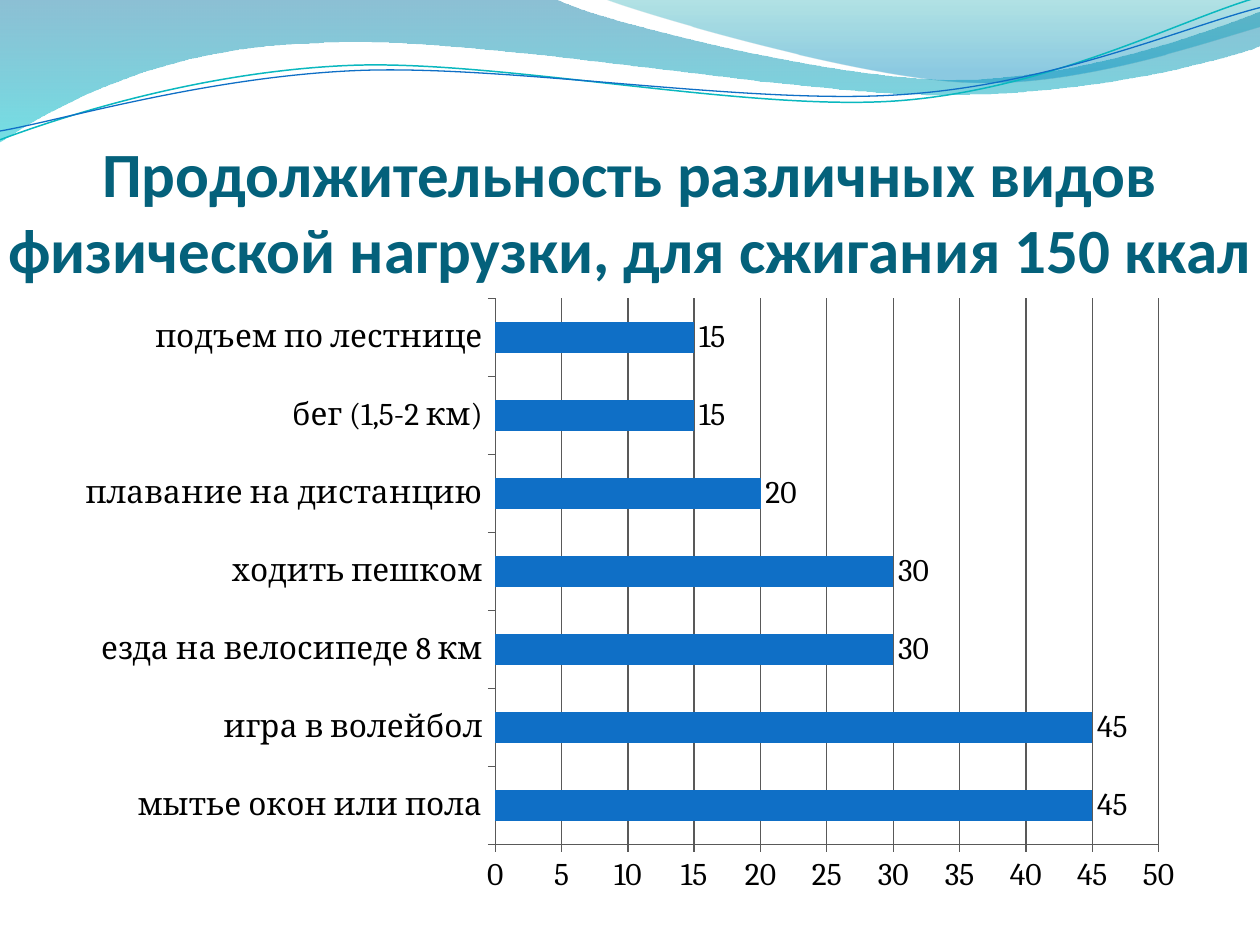
from math import cos, radians, sin
from lxml.etree import SubElement
from pptx import Presentation
from pptx.chart.data import CategoryChartData
from pptx.dml.color import RGBColor
from pptx.enum.chart import XL_CHART_TYPE as ChartType, XL_LABEL_POSITION as LabelPosition, XL_TICK_MARK as TickMark
from pptx.enum.text import MSO_ANCHOR as Anchor, MSO_AUTO_SIZE as AutoSize, PP_ALIGN as Align
from pptx.oxml.ns import qn
from pptx.util import Inches, Pt

COLORS = {
    "title": "04617B", "text": "000000", "bar": "0F6FC6", "grid": "595959",
    "teal_line": "0AB8BF", "blue_line": "0F6FC6",
    "deep": "0074A1", "aqua": "00C6CF", "teal": "00A1A9", "azure": "008BBF",
}

WAVES = [
    {"box": (-0.01, -0.01, 10.02, 1.14), "tilt": 0, "start": (0, 0),
     "gradient": [("deep", 0, 45), ("aqua", 1, 55)], "segments": [
        (4.4, -0.01), (4.76, 0.17, 6.64, 0.63, 7.58, 0.63), (8.53, 0.63, 9.58, 0.26, 10, 0.09),
        (10.01, 0.36), (9.83, 0.44, 8.7, 0.76, 7.46, 0.75), (6.22, 0.75, 3.82, 0.28, 2.57, 0.34),
        (1.29, 0.36, 0.46, 0.83, -0.01, 1.13), (0, 0)]},
    {"box": (4.79, -0.01, 5.21, 0.7), "tilt": 0, "start": (4.79, -0.01),
     "gradient": [("teal", 0, 30), ("azure", 0.8, 45)], "segments": [
        (5.09, 0.11, 6.82, 0.62, 7.69, 0.65), (8.56, 0.69, 9.61, 0.32, 10, 0.21),
        (10, 0), (4.79, -0.01)]},
    {"box": (-0.02, 0.22, 10.02, 0.71), "tilt": -2.7, "start": (0, 1.11),
     "line": ("teal_line", 0.85), "segments": [
        (0.48, 0.93, 1.58, 0.57, 2.77, 0.52), (3.95, 0.47, 5.93, 0.89, 7.13, 0.8),
        (8.33, 0.71, 9.38, 0.15, 9.98, -0.02)]},
    {"box": (-0.02, 0.3, 10.03, 0.58), "tilt": -2.7, "start": (0, 1.04),
     "line": ("blue_line", 0.75), "segments": [
        (0.47, 0.96, 1.64, 0.61, 2.83, 0.56), (4.03, 0.51, 5.97, 0.84, 7.17, 0.75),
        (8.36, 0.67, 9.41, 0.21, 10, 0.06)]},
]

MINUTES = {
    "мытье окон или пола": 45,
    "игра в волейбол": 45,
    "езда на велосипеде 8 км": 30,
    "ходить пешком": 30,
    "плавание на дистанцию": 20,
    "бег (1,5-2 км)": 15,
    "подъем по лестнице": 15,
}


def color(name):
    return RGBColor.from_string(COLORS[name])


def apply_format(target, values):
    for name, value in values.items():
        setattr(target, name, value)


def point_in_box(x, y, box, tilt):
    left, top, width, height = box
    angle = radians(-tilt)
    x, y = x - left - width / 2, y - top - height / 2
    return (Inches(x * cos(angle) - y * sin(angle) + width / 2),
            Inches(x * sin(angle) + y * cos(angle) + height / 2))


def draw_curves(shape, wave):
    outline = next(shape.element.iter(qn("a:path")))
    outline.set("w", str(shape.width))
    outline.set("h", str(shape.height))
    for element in list(outline):
        outline.remove(element)
    for index, numbers in enumerate([wave["start"], *wave["segments"]]):
        tag = "a:moveTo" if index == 0 else "a:lnTo" if len(numbers) == 2 else "a:cubicBezTo"
        command = SubElement(outline, qn(tag))
        for point in zip(numbers[::2], numbers[1::2]):
            x, y = point_in_box(*point, wave["box"], wave["tilt"])
            SubElement(command, qn("a:pt"), x=str(x), y=str(y))
    if "gradient" in wave:
        SubElement(outline, qn("a:close"))


def fill_gradient(shape, stops):
    shape.fill.gradient()
    shape.fill.gradient_angle = 270
    for stop, (name, position, _) in zip(shape.fill.gradient_stops, stops):
        stop.color.rgb = color(name)
        stop.position = position
    elements = list(shape.element.iter(qn("a:srgbClr")))
    for element, (_, _, opacity) in zip(elements, stops):
        SubElement(element, qn("a:alpha"), val=str(opacity * 1000))


def add_wave(slide, left, top, wave):
    x, y, width, height = map(Inches, wave["box"])
    builder = slide.shapes.build_freeform(0, 0)
    builder.add_line_segments([(width, height)], close=False)
    shape = builder.convert_to_shape()
    apply_format(shape, {"left": left + x, "top": top + y, "width": width, "height": height,
                         "rotation": wave["tilt"]})
    shape.shadow.inherit = False
    draw_curves(shape, wave)
    if "gradient" in wave:
        fill_gradient(shape, wave["gradient"])
        shape.line.fill.background()
    else:
        name, line_width = wave["line"]
        shape.fill.background()
        shape.line.color.rgb = color(name)
        shape.line.width = Pt(line_width)


def add_header(slide, left, top):
    for wave in WAVES:
        add_wave(slide, left, top, wave)


def add_title(slide, left, top, width, height):
    title = slide.shapes.title
    title.element.getparent().append(title.element)
    apply_format(title, {"left": left, "top": top, "width": width, "height": height})
    frame = title.text_frame
    frame.text = "Продолжительность различных видов физической нагрузки, для сжигания 150 ккал"
    apply_format(frame, {
        "margin_left": 0, "margin_right": 0, "margin_top": Inches(0.05), "margin_bottom": 0,
        "vertical_anchor": Anchor.BOTTOM, "word_wrap": True, "auto_size": AutoSize.NONE})
    paragraph = frame.paragraphs[0]
    paragraph.alignment = Align.CENTER
    font = paragraph.runs[0].font
    apply_format(font, {"name": "Calibri", "size": Pt(36), "bold": True})
    font.color.rgb = color("title")


def add_minutes_chart(slide, left, top, width, height):
    data = CategoryChartData()
    data.categories = list(MINUTES)
    data.add_series("Series 1", list(MINUTES.values()))
    chart = slide.shapes.add_chart(ChartType.BAR_CLUSTERED, left, top, width, height, data).chart
    apply_format(chart, {"has_legend": False, "has_title": False})
    apply_format(chart.font, {"name": "Cambria", "size": Pt(18)})
    chart.font.color.rgb = color("text")

    plot = chart.plots[0]
    apply_format(plot, {"gap_width": 150, "vary_by_categories": False, "has_data_labels": True})
    apply_format(plot.data_labels, {"show_value": True, "position": LabelPosition.OUTSIDE_END})
    fill = plot.series[0].format.fill
    fill.solid()
    fill.fore_color.rgb = color("bar")

    apply_format(chart.value_axis, {
        "minimum_scale": 0, "maximum_scale": 50, "major_unit": 5, "has_major_gridlines": True})
    for axis in (chart.category_axis, chart.value_axis):
        axis.major_tick_mark = TickMark.OUTSIDE
    for part in (chart.category_axis, chart.value_axis, chart.value_axis.major_gridlines):
        part.format.line.color.rgb = color("grid")
        part.format.line.width = Pt(0.75)


def main():
    presentation = Presentation()
    apply_format(presentation, {"slide_width": Inches(10), "slide_height": Inches(7.5)})
    slide = presentation.slides.add_slide(presentation.slide_layouts[5])
    add_header(slide, Inches(0), Inches(0))
    add_title(slide, Inches(0), Inches(0.86), Inches(10), Inches(1.41))
    add_minutes_chart(slide, Inches(0.5), Inches(2.27), Inches(9), Inches(4.92))
    presentation.save("out.pptx")


if __name__ == "__main__":
    main()
